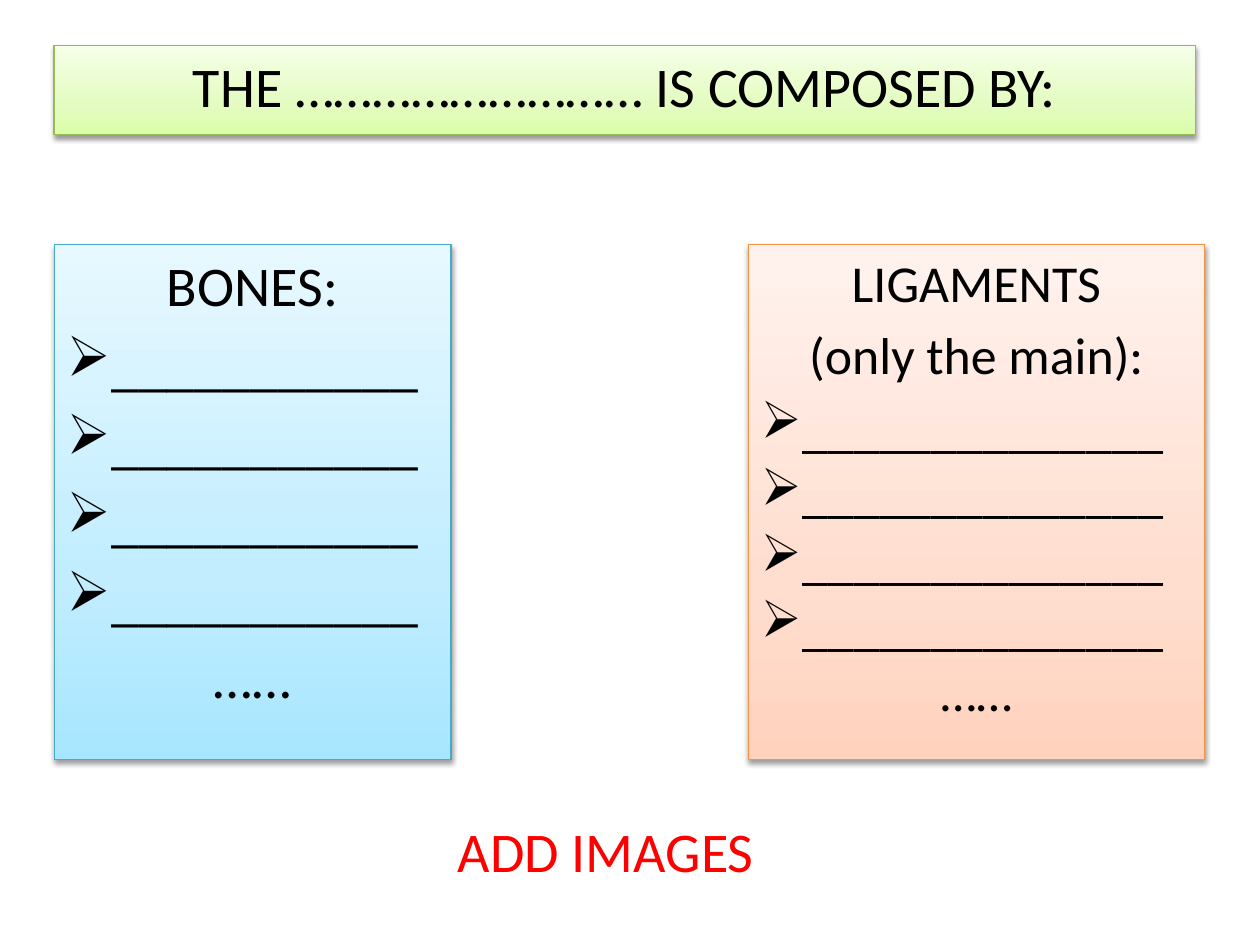
from dataclasses import dataclass

from pptx import Presentation
from pptx.dml.color import RGBColor
from pptx.enum.shapes import MSO_SHAPE as Preset
from pptx.enum.text import MSO_ANCHOR as Anchor, PP_ALIGN as Align
from pptx.oxml import parse_xml
from pptx.oxml.ns import nsdecls
from pptx.util import Inches, Pt

COLOURS = {
    "text": "000000",
    "accent": "FF0000",
    "green line": "98B955",
    "blue line": "46AAC5",
    "orange line": "F69240",
}
# Gradient stops run from the bottom edge to the top edge
GRADIENTS = {
    "green": ("DAFDA7", "E4FCC2", "F5FFE7"),
    "blue": ("A7E6FF", "C1EDFF", "E7F8FF"),
    "orange": ("FFD2BD", "FFDED0", "FFF2ED"),
}
STOPS = (0, 35, 100)
FONT = "Calibri"
BULLET, BULLET_FONT = "➢", "OpenSymbol"
SPACE_SHARE = 0.2
LEFT, PANEL_TOP, PANEL_HEIGHT = 0.43, 1.94, 4.09


@dataclass
class Line:
    text: str
    bullet: bool = False
    spacing: float = 1.0


@dataclass
class Panel:
    left: float
    top: float
    width: float
    height: float
    theme: str
    size: float
    lines: list[Line]


def write_lines(frame, lines: list[Line], size: float, colour: str) -> None:
    frame.word_wrap = True
    frame.vertical_anchor = Anchor.TOP
    for index, line in enumerate(lines):
        paragraph = frame.paragraphs[0] if index == 0 else frame.add_paragraph()
        paragraph.alignment = Align.LEFT if line.bullet else Align.CENTER
        paragraph.line_spacing = line.spacing
        paragraph.space_before = Pt(round(size * SPACE_SHARE, 1) if index else 0)
        if line.bullet:
            properties = paragraph._p.get_or_add_pPr()
            properties.set("marL", "0")
            properties.set("indent", "0")
            properties.append(parse_xml(f'<a:buFont {nsdecls("a")} typeface="{BULLET_FONT}"/>'))
            properties.append(parse_xml(f'<a:buChar {nsdecls("a")} char="{BULLET}"/>'))
        run = paragraph.add_run()
        run.text = line.text
        run.font.name = FONT
        run.font.size = Pt(size)
        run.font.color.rgb = RGBColor.from_string(COLOURS[colour])


def gradient_fill(theme: str):
    stops = "".join(
        f'<a:gs pos="{position * 1000}"><a:srgbClr val="{colour}"/></a:gs>'
        for position, colour in zip(STOPS, GRADIENTS[theme])
    )
    return parse_xml(
        f'<a:gradFill {nsdecls("a")} rotWithShape="1"><a:gsLst>{stops}</a:gsLst>'
        '<a:lin ang="16200000" scaled="0"/></a:gradFill>'
    )


def soft_shadow():
    return parse_xml(
        f'<a:effectLst {nsdecls("a")}>'
        f'<a:outerShdw blurRad="{Pt(3.1)}" dist="{Pt(1.6)}" dir="5400000" rotWithShape="0">'
        '<a:srgbClr val="000000"><a:alpha val="38000"/></a:srgbClr>'
        '</a:outerShdw></a:effectLst>'
    )


def add_panel(slide, panel: Panel) -> None:
    box = (Inches(v) for v in (panel.left, panel.top, panel.width, panel.height))
    shape = slide.shapes.add_shape(Preset.RECTANGLE, *box)
    shape.line.color.rgb = RGBColor.from_string(COLOURS[f"{panel.theme} line"])
    shape.line.width = Pt(0.75)
    properties = shape._element.spPr
    properties.find("{*}prstGeom").addnext(gradient_fill(panel.theme))
    properties.append(soft_shadow())
    write_lines(shape.text_frame, panel.lines, panel.size, "text")


def main() -> None:
    presentation = Presentation()
    presentation.slide_width, presentation.slide_height = Inches(10), Inches(7.5)
    slide = presentation.slides.add_slide(presentation.slide_layouts[6])

    # Heading and the two lists to fill in
    bone_blanks = [Line("_" * 11, bullet=True) for _ in range(4)]
    ligament_blanks = [
        Line("_" * 14, bullet=True, spacing=spacing) for spacing in (1.0, 0.9, 0.9, 0.9)
    ]
    panels = [
        Panel(LEFT, 0.36, 9.06, 0.71, "green", 32,
              [Line("THE ……………………… IS COMPOSED BY:")]),
        Panel(LEFT, PANEL_TOP, 3.15, PANEL_HEIGHT, "blue", 32,
              [Line("BONES:"), *bone_blanks, Line("……")]),
        Panel(5.94, PANEL_TOP, 3.62, PANEL_HEIGHT, "orange", 29.6,
              [Line("LIGAMENTS"), Line("(only the main):"), *ligament_blanks,
               Line("……", spacing=0.9)]),
    ]
    for panel in panels:
        add_panel(slide, panel)

    # Prompt below the lists
    prompt = slide.shapes.add_textbox(Inches(3.43), Inches(6.43), Inches(2.76), Inches(0.64))
    write_lines(prompt.text_frame, [Line("ADD IMAGES")], 32, "accent")

    presentation.save("out.pptx")


if __name__ == "__main__":
    main()
